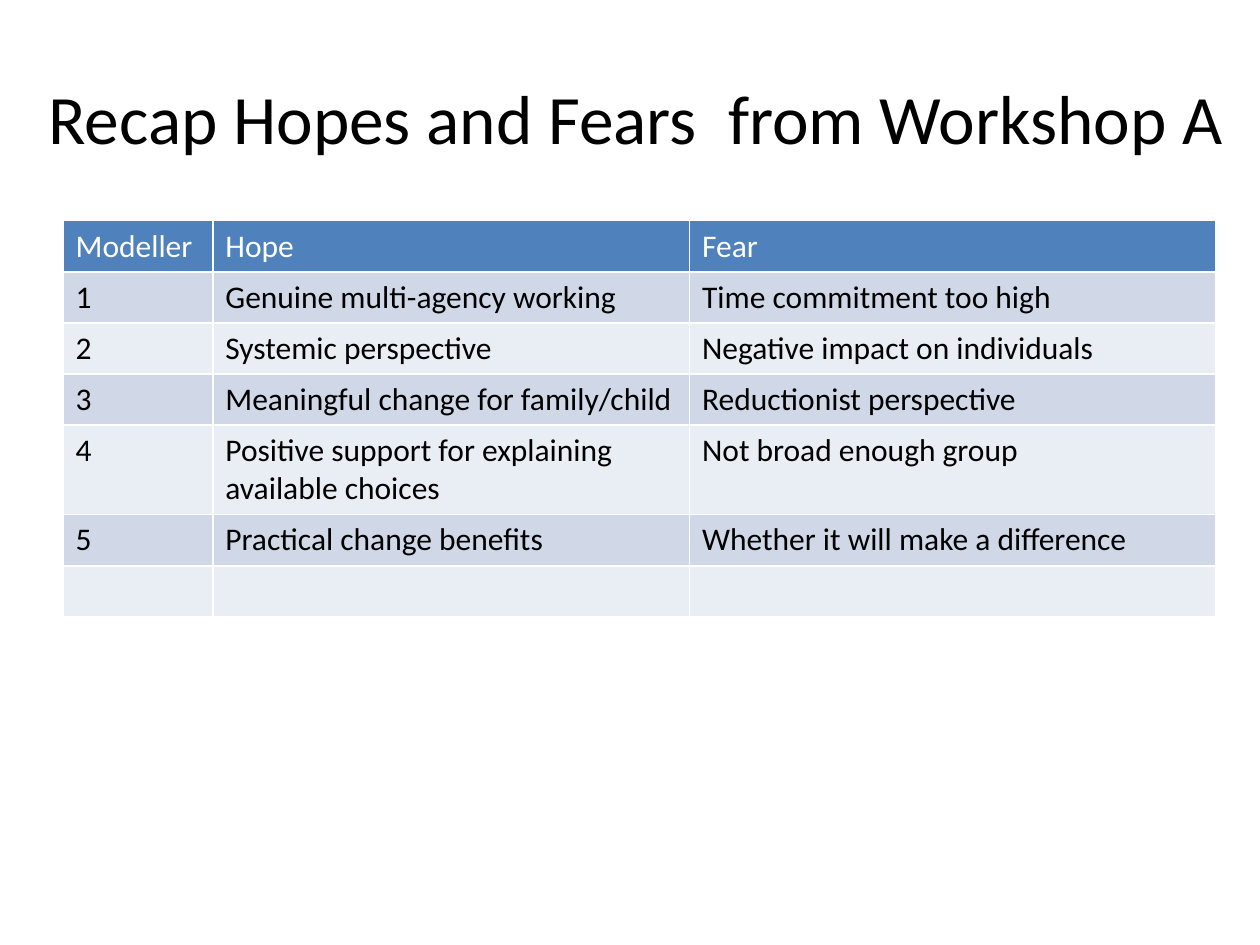
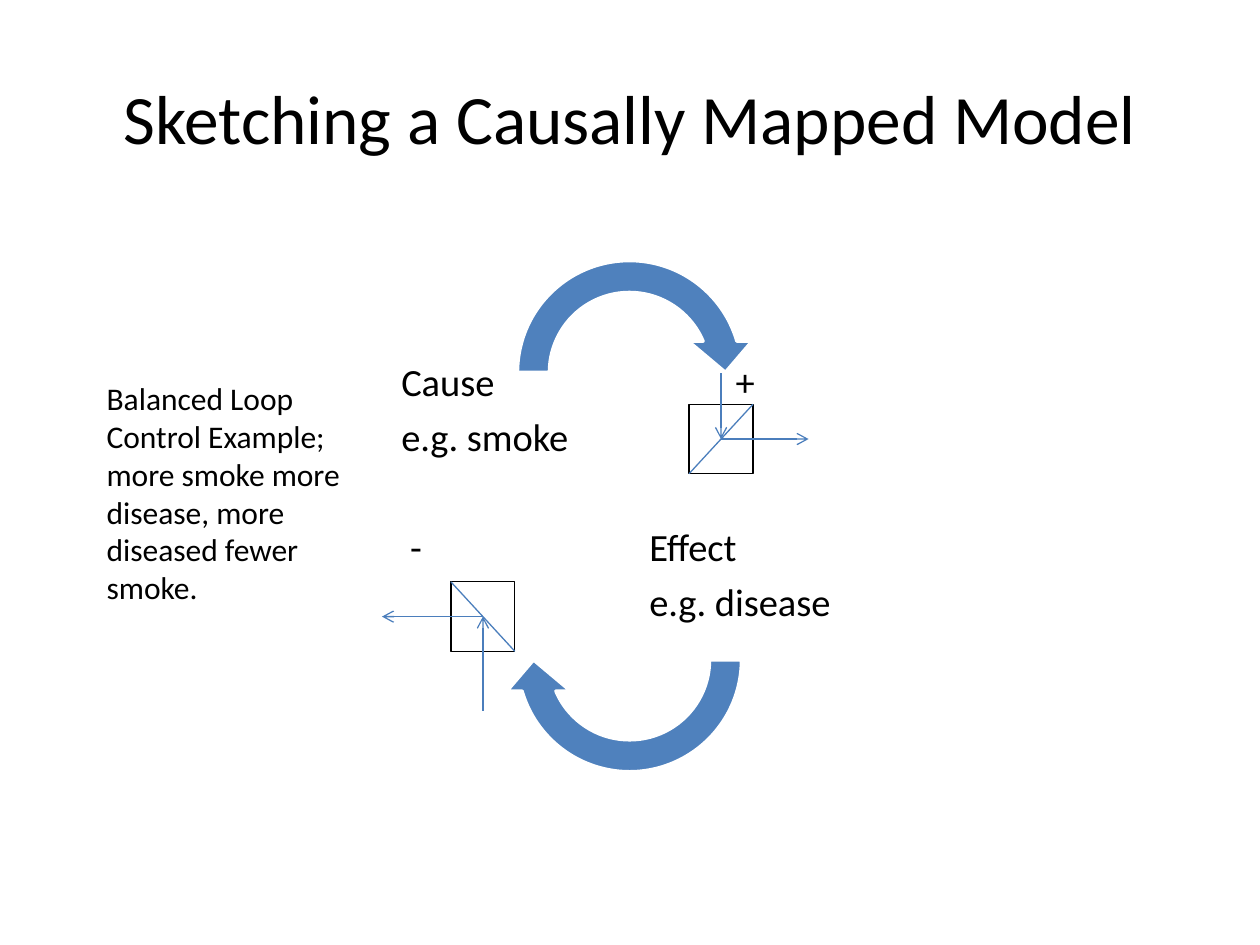
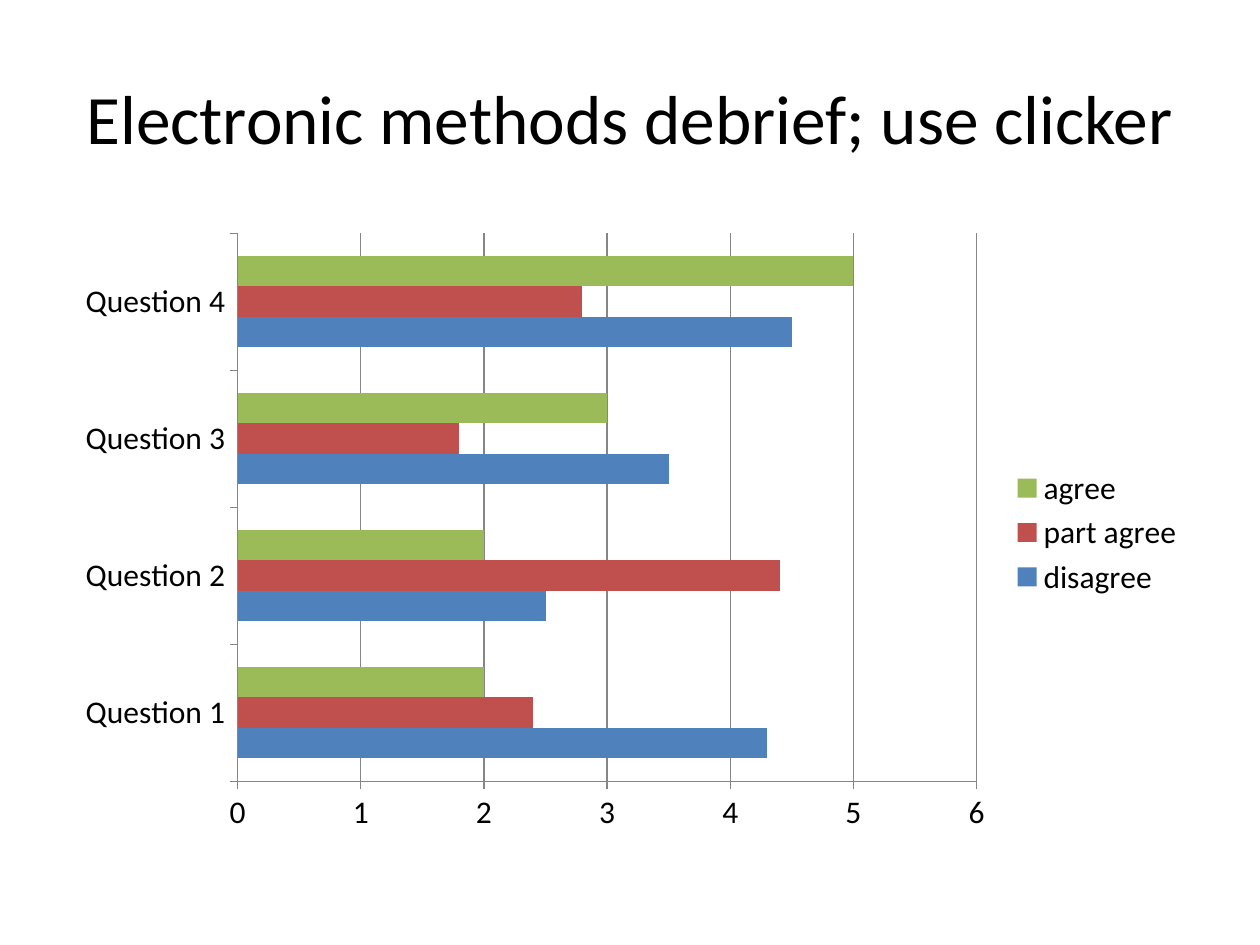
from dataclasses import dataclass

import lxml.etree
import pptx
import pptx.chart.data
import pptx.dml.color
import pptx.enum.chart
import pptx.enum.shapes
import pptx.enum.text
import pptx.oxml.ns
import pptx.util

Cm = pptx.util.Cm
Pt = pptx.util.Pt
RGBColor = pptx.dml.color.RGBColor
MSO_SHAPE = pptx.enum.shapes.MSO_SHAPE
qn = pptx.oxml.ns.qn

FONT = "Calibri"
BLACK = RGBColor(0x00, 0x00, 0x00)
WHITE = RGBColor(0xFF, 0xFF, 0xFF)
BLUE = RGBColor(0x4F, 0x81, 0xBD)
RED = RGBColor(0xC0, 0x50, 0x4D)
GREEN = RGBColor(0x9B, 0xBB, 0x59)
LINE_BLUE = RGBColor(0x4B, 0x7E, 0xBC)
AXIS_GREY = RGBColor(0x86, 0x86, 0x86)
BANDS = (RGBColor(0xD0, 0xD8, 0xE8), RGBColor(0xE9, 0xED, 0xF4))

TITLE_ONLY = 5
BODY_SIZE = 18
HAIRLINE = Pt(0.75)

HOPES_AND_FEARS = [
    ("Modeller", "Hope", "Fear"),
    ("1", "Genuine multi-agency working", "Time commitment too high"),
    ("2", "Systemic perspective", "Negative impact on individuals"),
    ("3", "Meaningful change for family/child", "Reductionist perspective"),
    ("4", "Positive support for explaining available choices", "Not broad enough group"),
    ("5", "Practical change benefits", "Whether it will make a difference"),
    ("", "", ""),
]
COLUMN_WIDTHS = (3.02, 9.61, 10.6)
ROW_HEIGHT = 1.03

QUESTIONS = [f"Question {n}" for n in range(1, 5)]


@dataclass
class Label:
    left: float
    top: float
    lines: tuple[str, ...]


@dataclass
class LoopArrow:
    top: float
    rotation: int


@dataclass
class Relation:
    left: float
    top: float
    rising: bool
    inflow_y: float
    outflow_x: float


@dataclass
class Answer:
    name: str
    values: tuple[float, ...]
    color: RGBColor


UPPER_ROW, LOWER_ROW = 7.32, 10.65
LABELS = [
    Label(8.09, UPPER_ROW, ("Cause", "e.g. smoke")),
    Label(8.27, LOWER_ROW, ("-",)),
    Label(14.83, UPPER_ROW, ("+",)),
    Label(13.09, LOWER_ROW, ("Effect", "e.g. disease")),
]
LOOP_NOTE = (
    "Balanced Loop",
    "Control Example;",
    "more smoke more",
    "disease, more",
    "diseased fewer",
    "smoke.",
)

LOOP_ARROWS = [LoopArrow(4.93, 0), LoopArrow(10.72, 180)]
LOOP_LEFT, LOOP_SIZE = 10.11, 5.16
LOOP_ADJUSTMENTS = (0.125, 11.42, 204.58, 108, 0.125)

RELATIONS = [
    Relation(13.89, 8.15, True, 7.52, 16.3),
    Relation(9.09, 11.73, False, 14.33, 7.7),
]
BOX_WIDTH, BOX_HEIGHT = 1.29, 1.4

ANSWERS = [
    Answer("disagree", (4.3, 2.5, 3.5, 4.5), BLUE),
    Answer("part agree", (2.4, 4.4, 1.8, 2.8), RED),
    Answer("agree", (2, 2, 3, 5), GREEN),
]


def set_font(font, size: float, color: RGBColor = BLACK) -> None:
    font.name = FONT
    font.size = Pt(size)
    font.color.rgb = color


def add_titled_slide(prs, title: str, left: float = 1.27, width: float = 22.86):
    s = prs.slides.add_slide(prs.slide_layouts[TITLE_ONLY])
    sp = s.shapes.title
    sp.left, sp.top, sp.width, sp.height = Cm(left), Cm(0.76), Cm(width), Cm(3.18)
    tf = sp.text_frame
    tf.text = title
    tf.auto_size = pptx.enum.text.MSO_AUTO_SIZE.NONE
    tf.vertical_anchor = pptx.enum.text.MSO_ANCHOR.MIDDLE
    p = tf.paragraphs[0]
    p.alignment = pptx.enum.text.PP_ALIGN.CENTER
    set_font(p.font, 39.6)
    return s


def add_lines(s, left: float, top: float, width: float, height: float,
              lines: tuple[str, ...], size: float):
    tf = s.shapes.add_textbox(Cm(left), Cm(top), Cm(width), Cm(height)).text_frame
    tf.text = "\n".join(lines)
    for p in tf.paragraphs:
        set_font(p.font, size)
    return tf


def add_label(s, label: Label) -> None:
    tf = add_lines(s, label.left, label.top, 4.4, 1.11 * len(label.lines), label.lines, 22)
    tf.margin_left = tf.margin_right = tf.margin_top = tf.margin_bottom = 0
    tf.word_wrap = True
    for p in tf.paragraphs:
        p.line_spacing = 0.9
        p.space_after = Pt(7.5)


def add_loop_arrow(s, arrow: LoopArrow) -> None:
    sp = s.shapes.add_shape(MSO_SHAPE.CIRCULAR_ARROW, Cm(LOOP_LEFT), Cm(arrow.top),
                            Cm(LOOP_SIZE), Cm(LOOP_SIZE))
    for i, value in enumerate(LOOP_ADJUSTMENTS):
        sp.adjustments[i] = value
    sp.rotation = arrow.rotation
    sp.shadow.inherit = False
    sp.fill.solid()
    sp.fill.fore_color.rgb = BLUE
    sp.line.color.rgb = WHITE
    sp.line.width = Pt(2)


def add_line(s, start: tuple[float, float], end: tuple[float, float],
             arrow: bool = False) -> None:
    cx = s.shapes.add_connector(pptx.enum.shapes.MSO_CONNECTOR.STRAIGHT,
                                *map(Cm, start), *map(Cm, end))
    cx.line.color.rgb = LINE_BLUE
    cx.line.width = HAIRLINE
    if arrow:
        lxml.etree.SubElement(cx.line._get_or_add_ln(), qn("a:tailEnd"), type="arrow")
    lxml.etree.SubElement(cx._element.spPr, qn("a:effectLst"))


def add_relation(s, rel: Relation) -> None:
    sp = s.shapes.add_shape(MSO_SHAPE.RECTANGLE, Cm(rel.left), Cm(rel.top),
                            Cm(BOX_WIDTH), Cm(BOX_HEIGHT))
    sp.shadow.inherit = False
    sp.fill.background()
    sp.line.color.rgb = BLACK
    sp.line.width = HAIRLINE

    right, bottom = rel.left + BOX_WIDTH, rel.top + BOX_HEIGHT
    x, y = rel.left + BOX_WIDTH / 2, rel.top + BOX_HEIGHT / 2
    if rel.rising:
        add_line(s, (rel.left, bottom), (right, rel.top))
    else:
        add_line(s, (rel.left, rel.top), (right, bottom))
    add_line(s, (x, rel.inflow_y), (x, y), arrow=True)
    add_line(s, (x, y), (rel.outflow_x, y), arrow=True)


def build_recap(prs) -> None:
    s = add_titled_slide(prs, "Recap Hopes and Fears  from Workshop A", 0.51, 24.61)
    rows = len(HOPES_AND_FEARS)
    table = s.shapes.add_table(rows, len(COLUMN_WIDTHS), Cm(1.27), Cm(4.45),
                               Cm(sum(COLUMN_WIDTHS)), Cm(ROW_HEIGHT * rows)).table
    for column, width in zip(table.columns, COLUMN_WIDTHS):
        column.width = Cm(width)
    for i, texts in enumerate(HOPES_AND_FEARS):
        table.rows[i].height = Cm(ROW_HEIGHT)
        for cell, text in zip(table.rows[i].cells, texts):
            cell.text = text
            cell.fill.solid()
            cell.fill.fore_color.rgb = BANDS[(i - 1) % 2] if i else BLUE
            p = cell.text_frame.paragraphs[0]
            set_font(p.font, BODY_SIZE, BLACK if i else WHITE)
            p.font.bold = False


def build_causal_map(prs) -> None:
    s = add_titled_slide(prs, "Sketching a Causally Mapped Model")
    for label in LABELS:
        add_label(s, label)
    for arrow in LOOP_ARROWS:
        add_loop_arrow(s, arrow)
    for rel in RELATIONS:
        add_relation(s, rel)
    tf = add_lines(s, 1.9, 7.52, 5.26, 4.88, LOOP_NOTE, BODY_SIZE)
    tf.word_wrap = False


def build_debrief(prs) -> None:
    s = add_titled_slide(prs, "Electronic methods debrief; use clicker")
    data = pptx.chart.data.CategoryChartData()
    data.categories = QUESTIONS
    for answer in ANSWERS:
        data.add_series(answer.name, answer.values)
    chart = s.shapes.add_chart(pptx.enum.chart.XL_CHART_TYPE.BAR_CLUSTERED, Cm(1.27), Cm(4.45),
                               Cm(22.86), Cm(12.57), data).chart
    set_font(chart.font, BODY_SIZE)
    chart.has_title = False
    chart.has_legend = True
    chart.legend.position = pptx.enum.chart.XL_LEGEND_POSITION.RIGHT
    chart.legend.include_in_layout = False

    plot = chart.plots[0]
    plot.gap_width = 150
    plot.vary_by_categories = False
    for series, answer in zip(plot.series, ANSWERS):
        series.format.fill.solid()
        series.format.fill.fore_color.rgb = answer.color

    value_axis = chart.value_axis
    value_axis.minimum_scale, value_axis.maximum_scale = 0, 6
    value_axis.major_unit = 1
    value_axis.has_major_gridlines = True
    for axis in (chart.category_axis, value_axis):
        axis.major_tick_mark = pptx.enum.chart.XL_TICK_MARK.OUTSIDE
        axis.format.line.color.rgb = AXIS_GREY
        axis.format.line.width = HAIRLINE
    grid_line = value_axis.major_gridlines.format.line
    grid_line.color.rgb = AXIS_GREY
    grid_line.width = HAIRLINE


def main() -> None:
    prs = pptx.Presentation()
    prs.slide_width, prs.slide_height = Cm(25.4), Cm(19.05)
    build_recap(prs)
    build_causal_map(prs)
    build_debrief(prs)
    prs.save("out.pptx")


if __name__ == "__main__":
    main()
